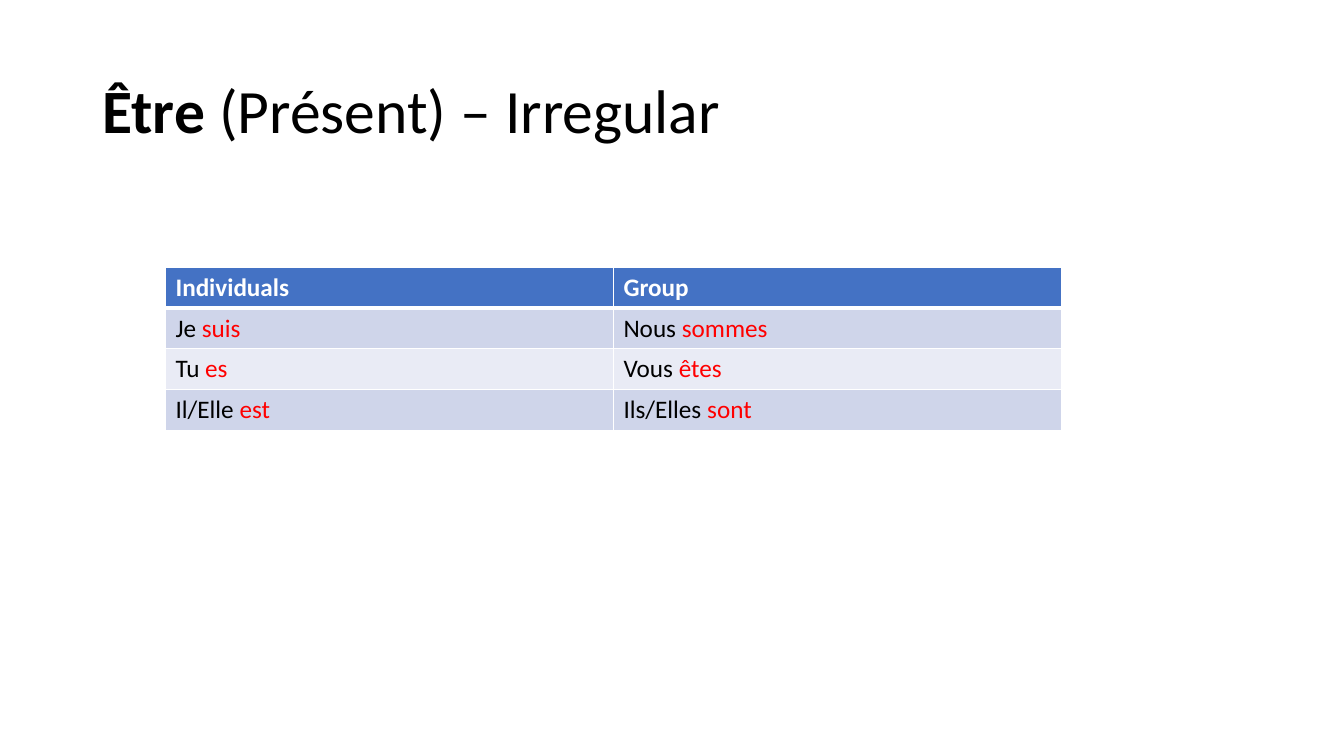
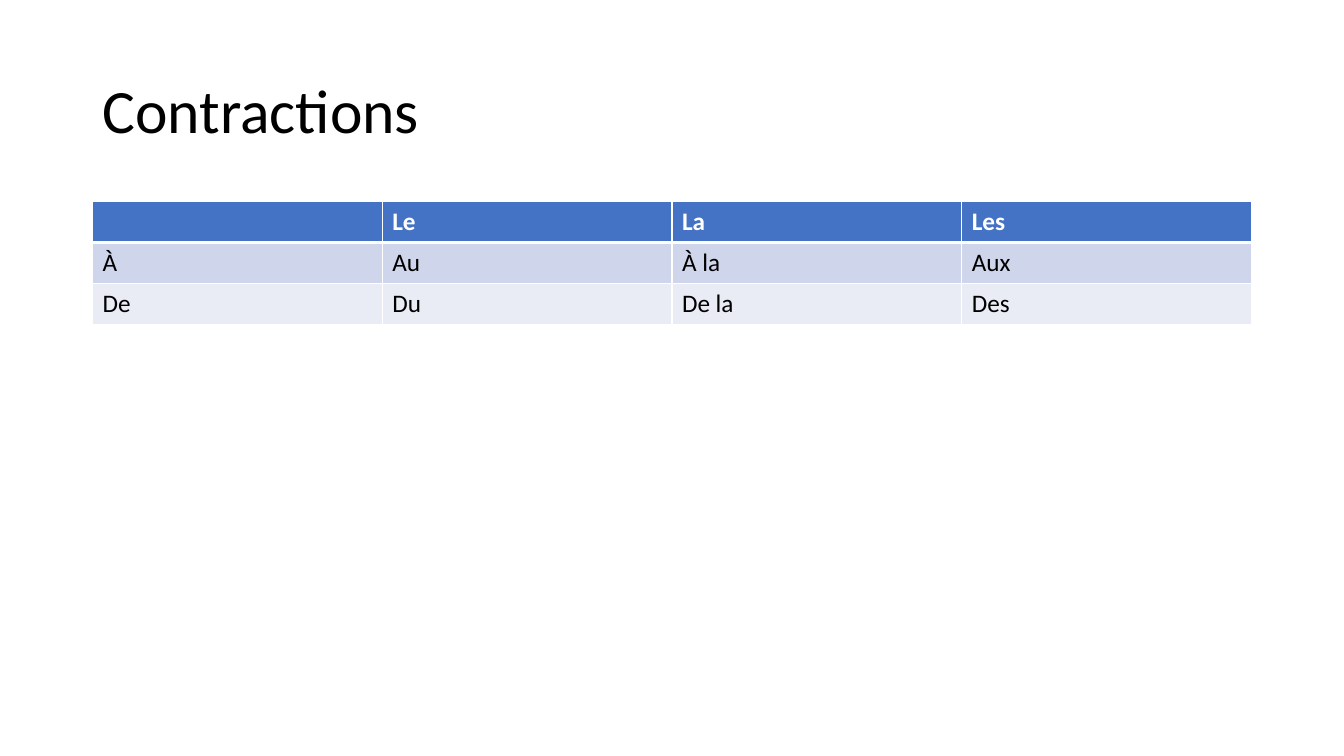
import pptx
import pptx.dml.color
import pptx.enum.text
import pptx.oxml
import pptx.oxml.ns
import pptx.util

Cm = pptx.util.Cm
Pt = pptx.util.Pt
RGBColor = pptx.dml.color.RGBColor

# Shared style
FONT = "Calibri"
BLACK = RGBColor(0x00, 0x00, 0x00)
WHITE = RGBColor(0xFF, 0xFF, 0xFF)
RED = RGBColor(0xFF, 0x00, 0x00)
BLUE = RGBColor(0x44, 0x72, 0xC4)
BANDS = (RGBColor(0xCF, 0xD5, 0xEA), RGBColor(0xE9, 0xEB, 0xF5))
LEFT = Cm(2.33)
WIDTH = Cm(29.21)
ROW = Cm(1.03)
THIN, THICK = Pt(1), Pt(3)


def add_run(para, text, size, color=BLACK, bold=False):
    run = para.add_run()
    run.text = text
    font = run.font
    font.name = FONT
    font.size = Pt(size)
    font.bold = bold
    font.color.rgb = color


def add_title(slide, *parts):
    """Each part is a text and whether it is bold."""
    box = slide.shapes.add_textbox(LEFT, Cm(1.01), WIDTH, Cm(3.68))
    frame = box.text_frame
    frame.word_wrap = True
    frame.vertical_anchor = pptx.enum.text.MSO_ANCHOR.MIDDLE
    para = frame.paragraphs[0]
    para.line_spacing = 0.9
    for text, bold in parts:
        add_run(para, text, 44, bold=bold)


def add_edges(cell, top, bottom):
    props = cell._tc.get_or_add_tcPr()
    for side, width in (("L", THIN), ("R", THIN), ("T", top), ("B", bottom)):
        props.append(pptx.oxml.parse_xml(
            f'<a:ln{side} {pptx.oxml.ns.nsdecls("a")} w="{width}">'
            f'<a:solidFill><a:srgbClr val="{WHITE}"/></a:solidFill>'
            f'</a:ln{side}>'))


def add_grid(slide, left, top, width, rows):
    """Each cell is a tuple of texts: the first plain, the second red."""
    count = len(rows[0])
    frame = slide.shapes.add_table(
        len(rows), count, left, top, width, ROW * len(rows))
    table = frame.table
    for col in table.columns:
        col.width = width // count
    for r, row in enumerate(rows):
        head = r == 0
        table.rows[r].height = ROW
        for c, texts in enumerate(row):
            cell = table.cell(r, c)
            add_edges(cell, THICK if r == 1 else THIN,
                      THICK if head else THIN)
            cell.fill.solid()
            cell.fill.fore_color.rgb = BLUE if head else BANDS[(r - 1) % 2]
            colors = (WHITE if head else BLACK, RED)
            for text, color in zip(texts, colors):
                add_run(cell.text_frame.paragraphs[0], text, 18, color, head)


def add_verb(slide):
    add_title(slide, ("Être", True), (" (Présent) – Irregular", False))
    add_grid(slide, Cm(4.17), Cm(6.73), Cm(22.58), [
        [("Individuals",), ("Group",)],
        [("Je ", "suis"), ("Nous ", "sommes")],
        [("Tu ", "es"), ("Vous ", "êtes")],
        [("Il/Elle ", "est"), ("Ils/Elles ", "sont")],
    ])


def add_forms(slide):
    add_title(slide, ("Contractions", False))
    add_grid(slide, LEFT, Cm(5.08), WIDTH, [
        [(), ("Le",), ("La",), ("Les",)],
        [("À",), ("Au",), ("À la",), ("Aux",)],
        [("De",), ("Du",), ("De la",), ("Des",)],
    ])


def main():
    deck = pptx.Presentation()
    deck.slide_width = Cm(33.87)
    deck.slide_height = Cm(19.05)
    blank = deck.slide_layouts[6]
    for build in (add_verb, add_forms):
        build(deck.slides.add_slide(blank))
    deck.save("out.pptx")


if __name__ == "__main__":
    main()
